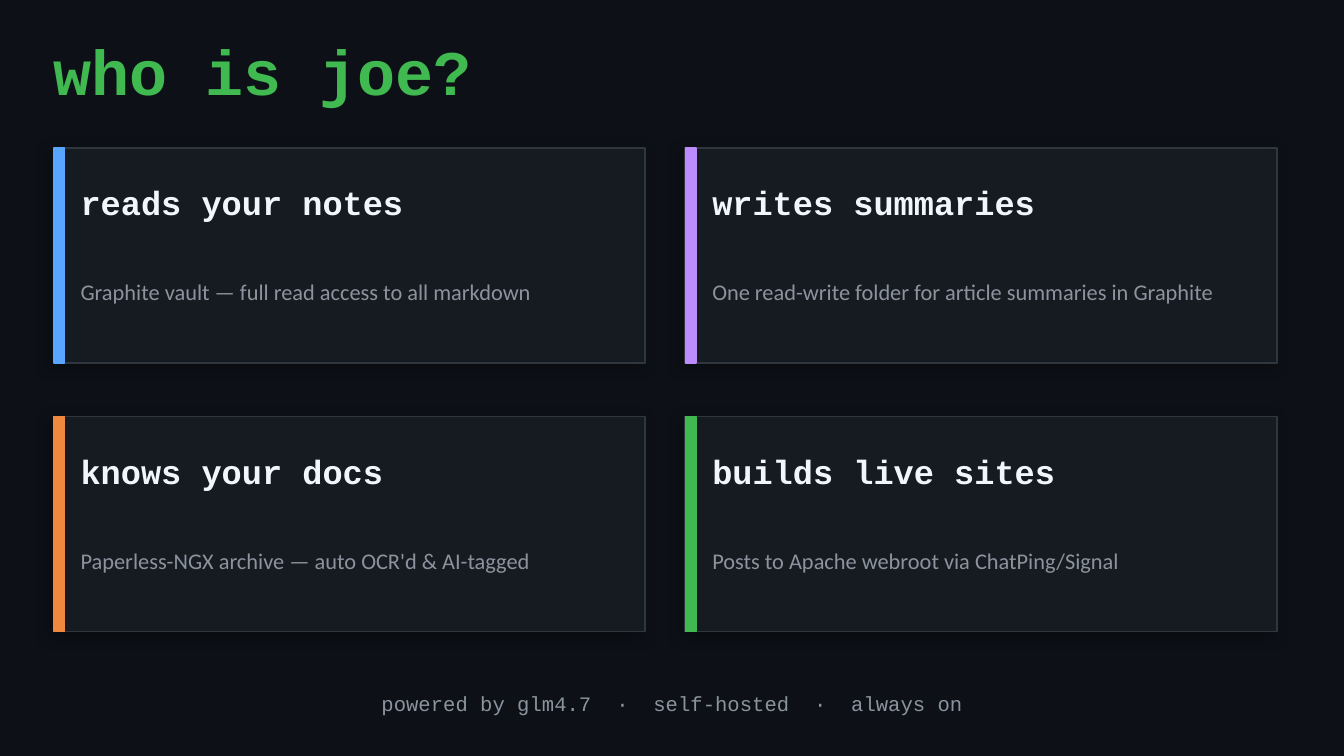
from dataclasses import dataclass

from lxml import etree
from pptx import Presentation
from pptx.dml.color import RGBColor
from pptx.enum.shapes import MSO_SHAPE
from pptx.enum.text import MSO_ANCHOR, MSO_AUTO_SIZE, PP_ALIGN
from pptx.oxml.ns import qn
from pptx.util import Inches, Pt

RECTANGLE = MSO_SHAPE.RECTANGLE
MIDDLE = MSO_ANCHOR.MIDDLE
NO_AUTOFIT = MSO_AUTO_SIZE.NONE
LEFT, CENTER = PP_ALIGN.LEFT, PP_ALIGN.CENTER

COLORS = {
    "background": "0D1117", "card": "161B22", "border": "30363D",
    "heading": "F0F6FC", "muted": "8B949E", "blue": "58A6FF",
    "purple": "BC8CFF", "orange": "F0883E", "green": "3FB950",
    "shadow": "000000",
}
MONO, SANS = "Courier New", "Calibri"

SLIDE_WIDTH = 10
SLIDE_HEIGHT = SLIDE_WIDTH * 9 / 16
MARGIN, CONTENT_WIDTH = 0.4, 9.2
CARD_TOP, CARD_WIDTH, CARD_HEIGHT = 1.1, 4.4, 1.6
COLUMN_STEP, ROW_STEP = 4.7, 2.0
STRIPE_WIDTH, TEXT_INDENT, TEXT_WIDTH = 0.08, 0.2, 4.1


@dataclass
class Card:
    heading: str
    detail: str
    accent: str


@dataclass
class TextStyle:
    font: str
    size: float
    color: str
    bold: bool = False
    align: PP_ALIGN = LEFT


CARDS = [
    Card("reads your notes",
         "Graphite vault — full read access to all markdown", "blue"),
    Card("writes summaries",
         "One read-write folder for article summaries in Graphite", "purple"),
    Card("knows your docs",
         "Paperless-NGX archive — auto OCR'd & AI-tagged", "orange"),
    Card("builds live sites",
         "Posts to Apache webroot via ChatPing/Signal", "green"),
]
FOOTER_PHRASES = ["powered by glm4.7", "self-hosted", "always on"]

TITLE_STYLE = TextStyle(MONO, 34, "green", bold=True)
HEADING_STYLE = TextStyle(MONO, 18, "heading", bold=True)
DETAIL_STYLE = TextStyle(SANS, 12, "muted")
FOOTER_STYLE = TextStyle(MONO, 11, "muted", align=CENTER)


def rgb(name: str) -> RGBColor:
    return RGBColor.from_string(COLORS[name])


def style_text(frame, style: TextStyle) -> None:
    frame.margin_left = frame.margin_right = 0
    frame.margin_top = frame.margin_bottom = 0
    frame.word_wrap = True
    frame.auto_size = NO_AUTOFIT
    frame.vertical_anchor = MIDDLE
    paragraph = frame.paragraphs[0]
    paragraph.alignment = style.align
    font = paragraph.font
    font.name, font.size, font.bold = style.font, Pt(style.size), style.bold
    font.color.rgb = rgb(style.color)


def add_text(slide, left: float, top: float, width: float, height: float,
             text: str, style: TextStyle):
    box = slide.shapes.add_textbox(
        Inches(left), Inches(top), Inches(width), Inches(height))
    box.text_frame.text = text
    style_text(box.text_frame, style)
    return box.text_frame.paragraphs[0]


def add_rectangle(slide, left: float, top: float, width: float,
                  fill: str, line: str):
    rectangle = slide.shapes.add_shape(
        RECTANGLE, Inches(left), Inches(top), Inches(width),
        Inches(CARD_HEIGHT))
    rectangle.shadow.inherit = False
    rectangle.fill.solid()
    rectangle.fill.fore_color.rgb = rgb(fill)
    rectangle.line.color.rgb = rgb(line)
    rectangle.line.width = Pt(1)
    return rectangle


def add_soft_shadow(shape) -> None:
    effects = shape._element.spPr.find(qn("a:effectLst"))
    shadow = etree.SubElement(
        effects, qn("a:outerShdw"), blurRad=str(Pt(8)), dist=str(Pt(3)),
        dir=str(135 * 60000), algn="bl", rotWithShape="0")
    color = etree.SubElement(shadow, qn("a:srgbClr"), val=COLORS["shadow"])
    etree.SubElement(color, qn("a:alpha"), val="35000")


def add_card(slide, left: float, top: float, card: Card) -> None:
    panel = add_rectangle(slide, left, top, CARD_WIDTH, "card", "border")
    add_soft_shadow(panel)
    add_rectangle(slide, left, top, STRIPE_WIDTH, card.accent, card.accent)
    text_left = left + TEXT_INDENT
    add_text(slide, text_left, top + 0.18, TEXT_WIDTH, 0.45,
             card.heading, HEADING_STYLE)
    add_text(slide, text_left, top + 0.72, TEXT_WIDTH, 0.7,
             card.detail, DETAIL_STYLE)


def add_footer(slide) -> None:
    first, *others = FOOTER_PHRASES
    footer = add_text(slide, MARGIN, 5.05, CONTENT_WIDTH, 0.36,
                      first, FOOTER_STYLE)
    for phrase in others:
        # One extra character width on each side of the dot
        separator = footer.add_run()
        separator.text = " ·"
        separator._r.get_or_add_rPr().set("spc", "660")
        footer.add_run().text = f" {phrase}"


def main() -> None:
    presentation = Presentation()
    presentation.slide_width = Inches(SLIDE_WIDTH)
    presentation.slide_height = Inches(SLIDE_HEIGHT)
    slide = presentation.slides.add_slide(presentation.slide_layouts[5])
    slide.background.fill.solid()
    slide.background.fill.fore_color.rgb = rgb("background")

    # Title
    title = slide.shapes.title
    title.left, title.top = Inches(MARGIN), Inches(0.22)
    title.width, title.height = Inches(CONTENT_WIDTH), Inches(0.6)
    title.text_frame.text = "who is joe?"
    style_text(title.text_frame, TITLE_STYLE)

    # Two-by-two grid of cards
    for index, card in enumerate(CARDS):
        row, column = divmod(index, 2)
        add_card(slide, MARGIN + column * COLUMN_STEP,
                 CARD_TOP + row * ROW_STEP, card)

    add_footer(slide)
    presentation.save("out.pptx")


if __name__ == "__main__":
    main()
